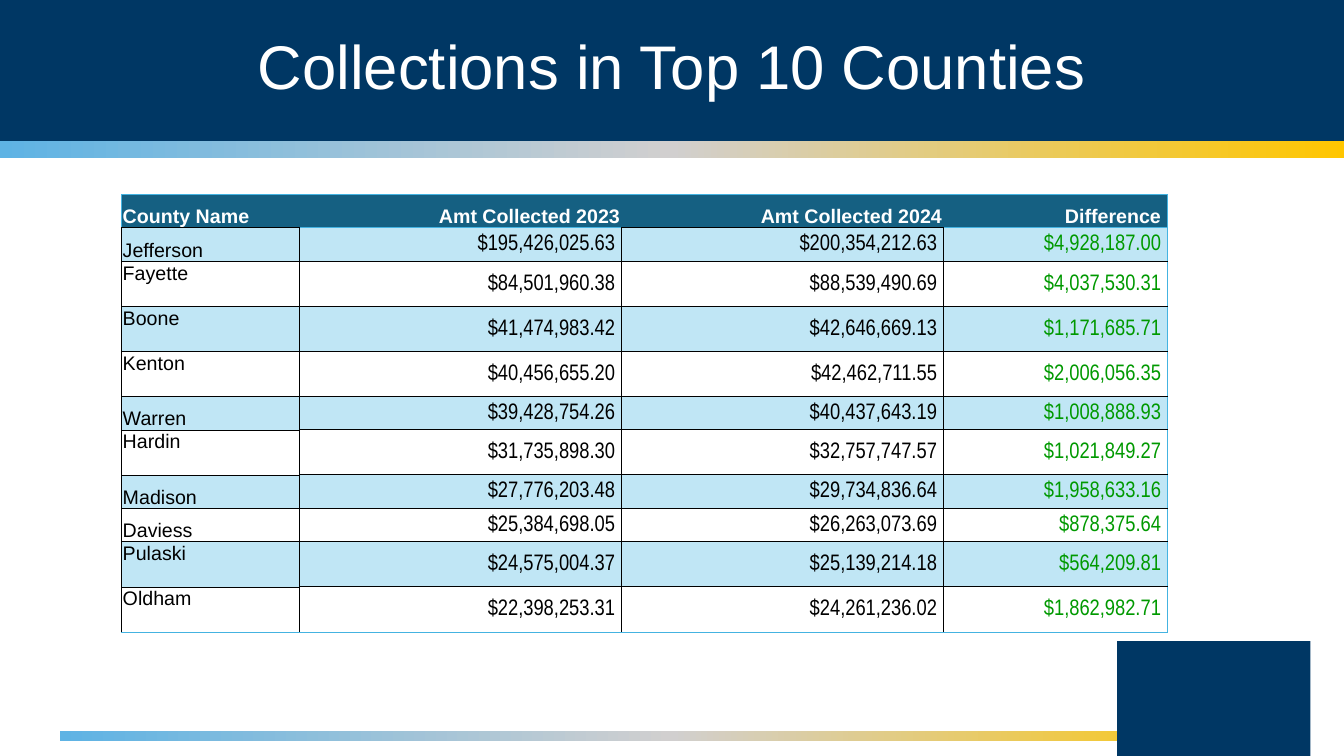
from copy import deepcopy

from lxml import etree
from pptx import Presentation
from pptx.dml.color import RGBColor
from pptx.enum.shapes import MSO_SHAPE
from pptx.enum.text import MSO_ANCHOR, PP_ALIGN
from pptx.oxml.ns import qn
from pptx.util import Pt

RECT = MSO_SHAPE.RECTANGLE
TOP, MIDDLE, BOTTOM = MSO_ANCHOR.TOP, MSO_ANCHOR.MIDDLE, MSO_ANCHOR.BOTTOM
LEFT, CENTER, RIGHT = PP_ALIGN.LEFT, PP_ALIGN.CENTER, PP_ALIGN.RIGHT

NAVY, WHITE, BLACK, GREEN = "003764", "FFFFFF", "000000", "009900"
HEADER, BAND, EDGE = "156082", "C0E6F5", "44B3E1"
BAR_STOPS = [(0, "5EB3E4"), (0.5, "D1CFCF"), (1, "FFC600")]
HAIR, THIN = 0.5, 1
SHORT, TALL = 23.9, 32.2
COLUMNS = [127, 230, 230, 160]
TITLES = ["County Name", "Amt Collected 2023", "Amt Collected 2024", "Difference"]
# County, 2023, 2024, difference, row height
COUNTIES = [
    ("Jefferson", "$195,426,025.63", "$200,354,212.63", "$4,928,187.00", SHORT),
    ("Fayette", "$84,501,960.38", "$88,539,490.69", "$4,037,530.31", TALL),
    ("Boone", "$41,474,983.42", "$42,646,669.13", "$1,171,685.71", TALL),
    ("Kenton", "$40,456,655.20", "$42,462,711.55", "$2,006,056.35", TALL),
    ("Warren", "$39,428,754.26", "$40,437,643.19", "$1,008,888.93", SHORT),
    ("Hardin", "$31,735,898.30", "$32,757,747.57", "$1,021,849.27", TALL),
    ("Madison", "$27,776,203.48", "$29,734,836.64", "$1,958,633.16", SHORT),
    ("Daviess", "$25,384,698.05", "$26,263,073.69", "$878,375.64", SHORT),
    ("Pulaski", "$24,575,004.37", "$25,139,214.18", "$564,209.81", TALL),
    ("Oldham", "$22,398,253.31", "$24,261,236.02", "$1,862,982.71", TALL),
]


def rgb(value):
    return RGBColor.from_string(value)


class Deck:
    def __init__(self, prs):
        self.font = "Arial"
        self.s = prs.slides.add_slide(prs.slide_layouts[6])

    def rect(self, x, y, w, h, color=None, stops=None):
        sp = self.s.shapes.add_shape(RECT, Pt(x), Pt(y), Pt(w), Pt(h))
        sp.shadow.inherit = False
        sp.line.fill.background()
        if stops:
            sp.fill.gradient()
            sp.fill.gradient_angle = 0
            first = next(sp._element.iter(qn("a:gs")))
            first.addnext(deepcopy(first))
            for stop, (position, stop_color) in zip(sp.fill.gradient_stops, stops):
                stop.position = position
                stop.color.rgb = rgb(stop_color)
        else:
            sp.fill.solid()
            sp.fill.fore_color.rgb = rgb(color)

    def add_text(self, tf, text, size, color, align, font=None, bold=False):
        p = tf.paragraphs[0]
        p.alignment = align
        r = p.add_run()
        r.text = text
        r.font.name = font or self.font
        r.font.size = Pt(size)
        r.font.bold = bold
        r.font.color.rgb = rgb(color)
        return p

    def title(self, x, y, w, h, text):
        tf = self.s.shapes.add_textbox(Pt(x), Pt(y), Pt(w), Pt(h)).text_frame
        tf.word_wrap = True
        tf.vertical_anchor = MIDDLE
        self.add_text(tf, text, 44, WHITE, CENTER).line_spacing = 0.9

    def table(self, x, y, columns, heights):
        frame = self.s.shapes.add_table(len(heights), len(columns), Pt(x), Pt(y),
                                        Pt(sum(columns)), Pt(sum(heights)))
        table = frame.table
        table.first_row = table.horz_banding = False
        for column, width in zip(table.columns, columns):
            column.width = Pt(width)
        for row, height in zip(table.rows, heights):
            row.height = Pt(height)
        return table

    def cell(self, cell, text, anchor, fill, borders, right=1, **style):
        cell.vertical_anchor = anchor
        cell.margin_left = cell.margin_top = Pt(0.7)
        cell.margin_right, cell.margin_bottom = Pt(right), Pt(0)
        self.add_text(cell.text_frame, text, **style)
        tcPr = cell._tc.get_or_add_tcPr()
        for side, border in zip("LRTB", borders):
            ln = etree.SubElement(tcPr, qn(f"a:ln{side}"))
            if border:
                color, width = border
                ln.set("w", str(Pt(width)))
                solid = etree.SubElement(ln, qn("a:solidFill"))
                etree.SubElement(solid, qn("a:srgbClr"), val=color)
            else:
                etree.SubElement(ln, qn("a:noFill"))
        if fill:
            cell.fill.solid()
            cell.fill.fore_color.rgb = rgb(fill)
        else:
            cell.fill.background()


def main():
    prs = Presentation()
    prs.slide_width, prs.slide_height = Pt(960), Pt(540)
    deck = Deck(prs)

    # Title band, gradient bars and corner block
    deck.rect(0, 0, 960, 100.8, NAVY)
    deck.rect(0, 100.8, 960, 12.3, stops=BAR_STOPS)
    deck.rect(43, 522, 874, 7.2, stops=BAR_STOPS)
    deck.rect(798, 458, 138, 85, NAVY)
    deck.title(0, 0, 960, 99.4, "Collections in Top 10 Counties")

    # Table header: black and blue lower edges alternate
    table = deck.table(87, 138.8, COLUMNS, [SHORT] + [row[-1] for row in COUNTIES])
    blue, hair, thin = (EDGE, HAIR), (BLACK, HAIR), (BLACK, THIN)
    under_header = [hair, blue, hair, blue]
    last_col, last_row = len(COLUMNS) - 1, len(COUNTIES)
    for c, text in enumerate(TITLES):
        borders = (None if c else blue, blue if c == last_col else None,
                   blue, under_header[c])
        deck.cell(table.cell(0, c), text, BOTTOM, HEADER, borders,
                  right=4.6 if c == last_col else 1, size=14, color=WHITE,
                  align=RIGHT if c else LEFT, bold=True)

    # County rows
    for i, (county, *amounts, height) in enumerate(COUNTIES, 1):
        fill = BAND if i % 2 else None
        bottom = blue if i == last_row else None
        deck.cell(table.cell(i, 0), county, TOP if height == TALL else BOTTOM, fill,
                  (hair, hair, hair, bottom or hair), size=14, color=BLACK, align=LEFT)
        for c, amount in enumerate(amounts, 1):
            borders = (hair if c == 1 else thin, blue if c == last_col else thin,
                       under_header[c] if i == 1 else thin, bottom or thin)
            deck.cell(table.cell(i, c), amount, MIDDLE, fill, borders, right=4.6,
                      size=16, color=GREEN if c == last_col else BLACK,
                      align=RIGHT, font="Arial Narrow")

    prs.save("out.pptx")


if __name__ == "__main__":
    main()
